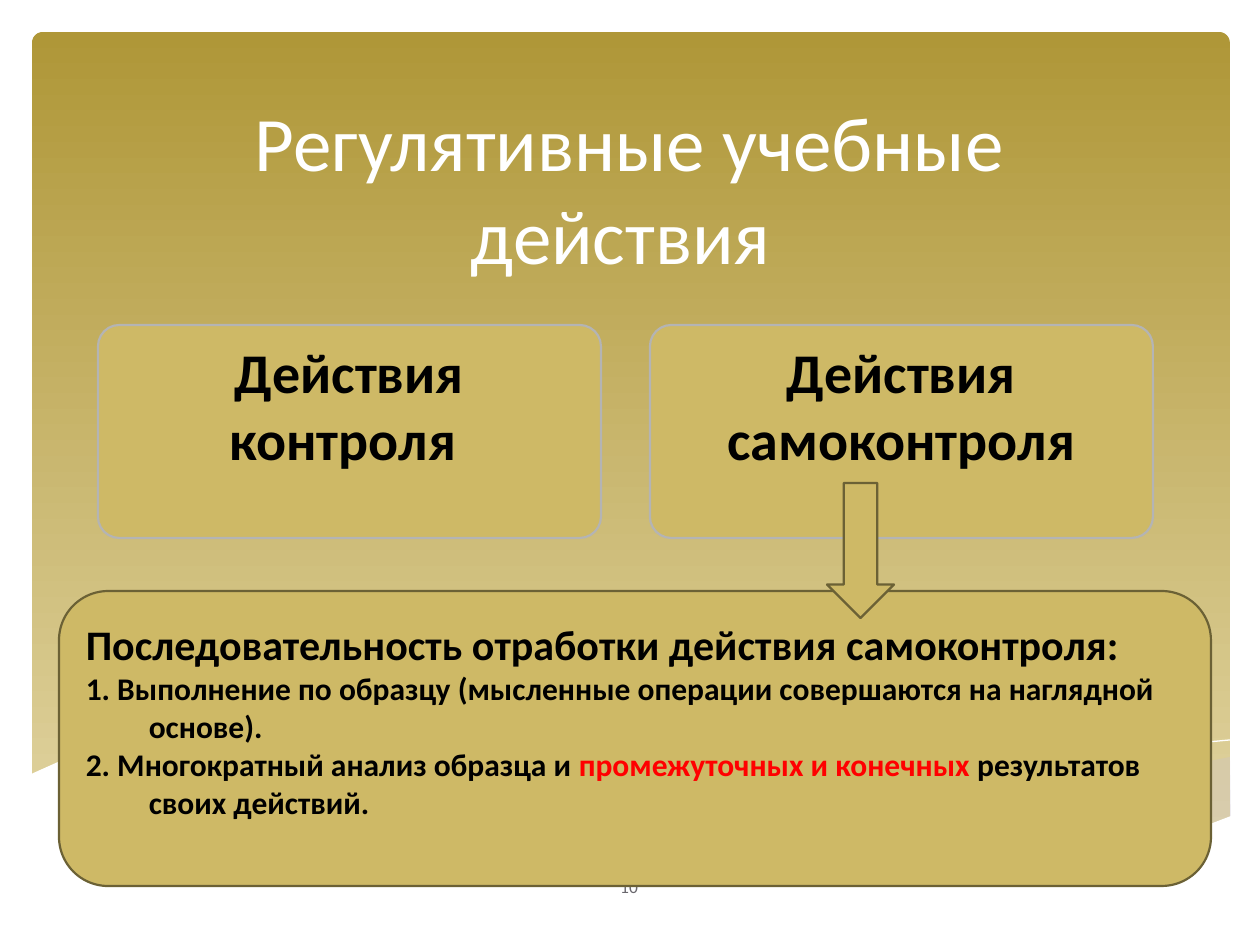
from pptx import Presentation
from pptx.dml.color import RGBColor
from pptx.enum.shapes import MSO_SHAPE
from pptx.enum.text import MSO_ANCHOR, MSO_AUTO_SIZE, PP_ALIGN
from pptx.util import Emu, Pt
from lxml import etree

ROUNDED = MSO_SHAPE.ROUNDED_RECTANGLE
DOWN_ARROW = MSO_SHAPE.DOWN_ARROW
TOP, MIDDLE, BOTTOM = MSO_ANCHOR.TOP, MSO_ANCHOR.MIDDLE, MSO_ANCHOR.BOTTOM
LEFT, CENTER = PP_ALIGN.LEFT, PP_ALIGN.CENTER
NO_AUTOFIT = MSO_AUTO_SIZE.NONE

EMU_PER_PX = 914400 / 126
DRAWING_NS = "http://schemas.openxmlformats.org/drawingml/2006/main"

BLACK, WHITE, RED, GREY = "000000", "FFFFFF", "FF0000", "69676D"
GOLD, DARK_GOLD, SILVER = "CEB966", "6B6135", "B4B4B4"

BACK_WAVE = [
    (1230, 757), (1179, 767), (1124, 779), (1086, 788), (1016, 805),
    (950, 819), (891, 830), (834, 840), (890, 848), (955, 854),
    (1013, 857), (1077, 854), (1131, 847), (1181, 835), (1231, 818),
]
CREST = [
    (774, 830), (823, 816), (908, 795), (979, 779), (1055, 764),
    (1111, 753), (1166, 746), (1230, 740),
]
FRONT_WAVE = [
    (1231, 816), (1197, 829), (1147, 843), (1087, 852), (1019, 856),
    (937, 852), (842, 840), (730, 820), (634, 800), (563, 784),
    (460, 761), (368, 746), (290, 740), (223, 738), (150, 742),
    (96, 752), (58, 762), (29, 775), (29, 921), (1231, 921),
]


def px(length):
    return Emu(round(length * EMU_PER_PX))


def color(value):
    return RGBColor.from_string(value)


class SlideBuilder:
    font_name = "Calibri"
    line_width = Pt(1.25)

    def __init__(self, slide):
        self.slide = slide

    def paint(self, shape, fill=None, line=None, width=None):
        shape.shadow.inherit = False
        if fill:
            shape.fill.solid()
            shape.fill.fore_color.rgb = color(fill)
        else:
            shape.fill.background()
        if line:
            shape.line.color.rgb = color(line)
            shape.line.width = self.line_width if width is None else width
        else:
            shape.line.fill.background()

    def block(self, preset, box, fill=None, line=None, corner=None):
        shape = self.slide.shapes.add_shape(preset, *map(px, box))
        if corner is not None:
            shape.adjustments[0] = corner
        self.paint(shape, fill, line)
        return shape

    def backdrop(self, box, corner, top_color, bottom_color):
        panel = self.block(ROUNDED, box, corner=corner)
        panel.fill.gradient()
        panel.fill.gradient_angle = 270
        for stop, value in zip(panel.fill.gradient_stops, (top_color, bottom_color)):
            stop.color.rgb = color(value)

    def outline(self, points, fill=None, line=None, closed=True, alpha=None):
        builder = self.slide.shapes.build_freeform(*points[0], scale=EMU_PER_PX)
        builder.add_line_segments(points[1:], close=closed)
        shape = builder.convert_to_shape()
        self.paint(shape, fill, line, Pt(0))
        if alpha is not None:
            tint = shape._element.spPr.find(f".//{{{DRAWING_NS}}}srgbClr")
            etree.SubElement(tint, f"{{{DRAWING_NS}}}alpha", val=str(alpha * 1000))

    def style_paragraph(self, paragraph, size, ink, bold=False, align=CENTER):
        paragraph.alignment = align
        paragraph.font.name = self.font_name
        paragraph.font.size = Pt(size)
        paragraph.font.bold = bold
        paragraph.font.color.rgb = color(ink)

    def set_text(self, shape, words, size, ink, anchor, bold=False):
        frame = shape.text_frame
        frame.word_wrap = True
        frame.auto_size = NO_AUTOFIT
        frame.vertical_anchor = anchor
        frame.text = words
        self.style_paragraph(frame.paragraphs[0], size, ink, bold)

    def title(self, box, words):
        heading = self.slide.shapes.title
        heading.left, heading.top, heading.width, heading.height = map(px, box)
        self.set_text(heading, words, 44, WHITE, BOTTOM)
        self.slide.shapes._spTree.append(heading._element)

    def label(self, box, words):
        page_number = self.slide.shapes.add_textbox(*map(px, box))
        self.set_text(page_number, words, 10, GREY, MIDDLE)

    def card(self, box, words):
        self.set_text(self.block(ROUNDED, box, GOLD, SILVER, 0.1), words, 32, BLACK, TOP, True)

    def sequence(self, box, heading, steps, hang, bottom_inset):
        panel = self.block(ROUNDED, box, GOLD, DARK_GOLD)
        self.set_text(panel, heading, 24, BLACK, MIDDLE, True)
        frame = panel.text_frame
        frame.margin_bottom = px(bottom_inset)
        frame.paragraphs[0].alignment = LEFT
        for step in steps:
            paragraph = frame.add_paragraph()
            self.style_paragraph(paragraph, 18, BLACK, True, LEFT)
            properties = paragraph._p.get_or_add_pPr()
            properties.set("marL", str(px(hang)))
            properties.set("indent", str(-px(hang)))
            for words, ink in step:
                run = paragraph.add_run()
                run.text = words
                run.font.color.rgb = color(ink)


def main():
    deck = Presentation()
    deck.slide_width, deck.slide_height = px(1260), px(945)
    builder = SlideBuilder(deck.slides.add_slide(deck.slide_layouts[5]))

    builder.backdrop((32, 32, 1198, 832), 0.013, "AF9738", "E2D5A3")
    builder.outline(BACK_WAVE, fill="C9C2D1", alpha=29)
    builder.outline(CREST, line=WHITE, closed=False)
    builder.outline(FRONT_WAVE, fill=WHITE)

    builder.title((94, 59, 1071, 227), "Регулятивные учебные действия ")
    builder.label((549, 862, 160, 50), "10")
    for column, action in enumerate(("Действия контроля ", "Действия самоконтроля")):
        builder.card((98 + column * 552, 325, 503, 213), action)

    builder.sequence(
        (59, 591, 1152, 295),
        "Последовательность отработки действия самоконтроля:",
        [
            [("1. Выполнение по образцу (мысленные операции совершаются "
              "на наглядной основе).", BLACK)],
            [("2. Многократный анализ образца и ", BLACK),
             ("промежуточных и конечных ", RED),
             ("результатов своих действий.", BLACK)],
        ],
        hang=63,
        bottom_inset=44,
    )
    builder.block(DOWN_ARROW, (827, 483, 67, 135), GOLD, DARK_GOLD)
    deck.save("out.pptx")


if __name__ == "__main__":
    main()
